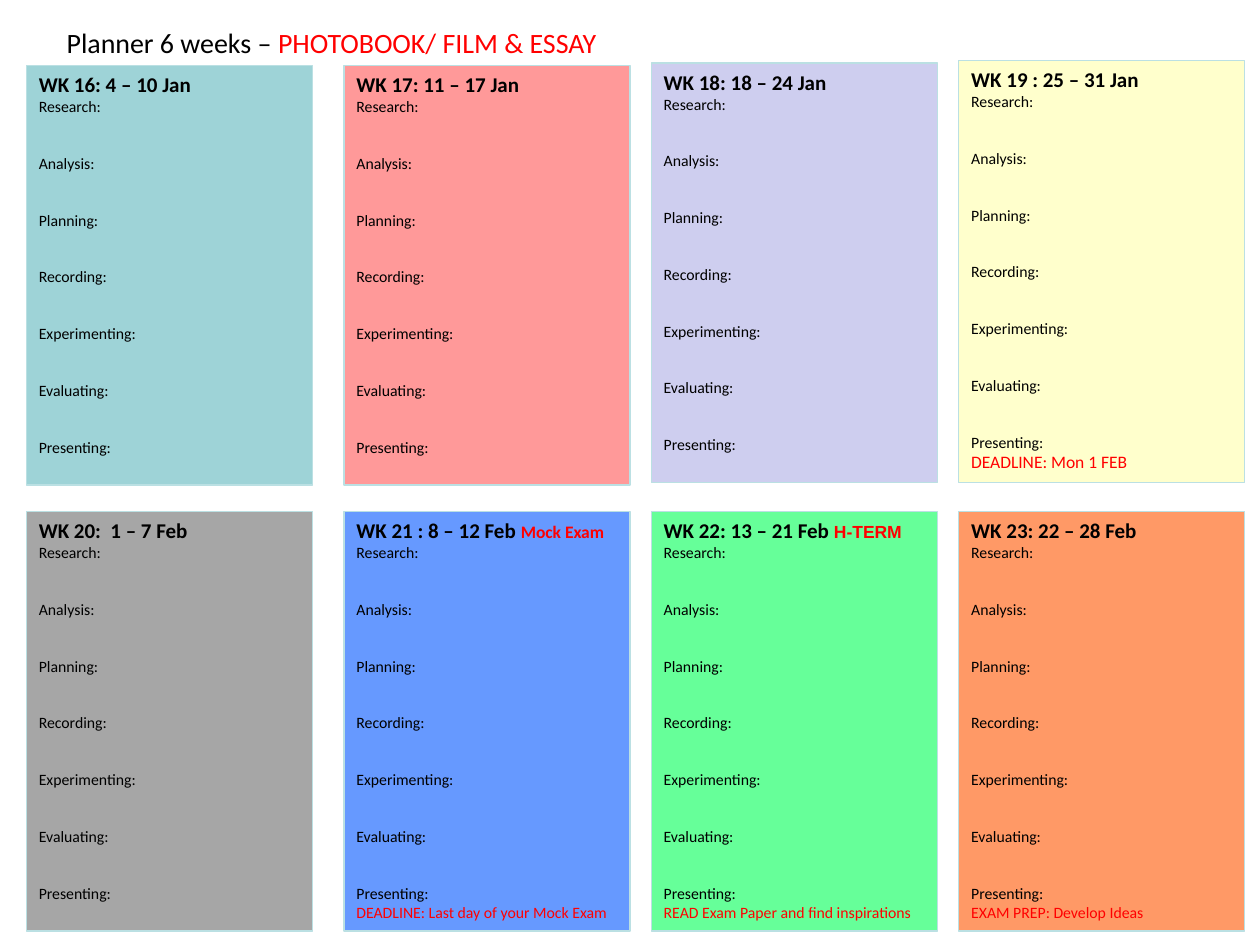
from dataclasses import dataclass

from pptx import Presentation
from pptx.dml.color import RGBColor
from pptx.enum.shapes import MSO_SHAPE
from pptx.enum.text import MSO_ANCHOR, PP_ALIGN
from pptx.util import Pt

RECTANGLE = MSO_SHAPE.RECTANGLE
TOP = MSO_ANCHOR.TOP
LEFT = PP_ALIGN.LEFT


@dataclass(frozen=True)
class Theme:
    font: str = "Calibri"
    tag_font: str = "Arial"
    ink: str = "000000"
    alert: str = "FF0000"
    border: str = "BBE0E3"
    border_width: float = 0.75
    title_size: int = 16
    heading_size: int = 12
    note_size: int = 10
    body_size: int = 9
    stage_gap: float = 21.6


STAGES = ["Research:", "Analysis:", "Planning:", "Recording:",
          "Experimenting:", "Evaluating:", "Presenting:"]
COLUMN_LEFTS = [15.1, 196.6, 372.2, 547.9]
JANUARY_TOPS = [37.4, 37.4, 36, 34.6]
FEBRUARY_TOP = 292.3
CARD_WIDTH, CARD_HEIGHT, TALL_CARD_HEIGHT = 163.4, 239.8, 241.2


class Planner:
    """Draws the parts of a weekly planner slide in one theme."""

    def __init__(self, slide, theme):
        self.slide = slide
        self.theme = theme

    def style_run(self, run, size, color=None, bold=False, font=None):
        run.font.name = font or self.theme.font
        run.font.size = Pt(size)
        run.font.bold = bold
        run.font.color.rgb = RGBColor.from_string(color or self.theme.ink)

    def add_run(self, paragraph, text, size, **style):
        run = paragraph.add_run()
        run.text = text
        self.style_run(run, size, **style)

    def title(self, left, top, width, height, subject, topic):
        box = self.slide.shapes.add_textbox(Pt(left), Pt(top), Pt(width), Pt(height))
        box.text_frame.word_wrap = True
        line = box.text_frame.paragraphs[0]
        self.add_run(line, subject, self.theme.title_size)
        self.add_run(line, topic, self.theme.title_size, color=self.theme.alert)

    def week_card(self, left, top, height, fill, week, tag="", tag_font=None,
                  note="", note_size=None):
        theme = self.theme
        card = self.slide.shapes.add_shape(
            RECTANGLE, Pt(left), Pt(top), Pt(CARD_WIDTH), Pt(height))
        card.shadow.inherit = False
        card.fill.solid()
        card.fill.fore_color.rgb = RGBColor.from_string(fill)
        card.line.color.rgb = RGBColor.from_string(theme.border)
        card.line.width = Pt(theme.border_width)

        frame = card.text_frame
        frame.word_wrap = True
        frame.vertical_anchor = TOP
        heading = frame.paragraphs[0]
        self.add_run(heading, week, theme.heading_size, bold=True)
        if tag:
            self.add_run(heading, tag, theme.note_size, color=theme.alert,
                         bold=True, font=tag_font)
        for index, stage in enumerate(STAGES):
            line = frame.add_paragraph()
            line.space_before = Pt(theme.stage_gap if index else 0)
            self.add_run(line, stage, theme.body_size)
        if note:
            self.add_run(frame.add_paragraph(), note, note_size or theme.body_size,
                         color=theme.alert)
        for paragraph in frame.paragraphs:
            paragraph.alignment = LEFT


def main():
    deck = Presentation()
    deck.slide_width, deck.slide_height = Pt(720), Pt(540)
    theme = Theme()
    planner = Planner(deck.slides.add_slide(deck.slide_layouts[6]), theme)

    january = [
        dict(week="WK 16: 4 – 10 Jan", fill="9ED3D7"),
        dict(week="WK 17: 11 – 17 Jan", fill="FF9999"),
        dict(week="WK 18: 18 – 24 Jan", fill="CECEEF"),
        dict(week="WK 19 : 25 – 31 Jan", fill="FFFFCC", height=TALL_CARD_HEIGHT,
             note="DEADLINE: Mon 1 FEB", note_size=theme.note_size),
    ]
    february = [
        dict(week="WK 20:  1 – 7 Feb", fill="A6A6A6"),
        dict(week="WK 21 : 8 – 12 Feb ", fill="6699FF", tag="Mock Exam",
             note="DEADLINE: Last day of your Mock Exam"),
        dict(week="WK 22: 13 – 21 Feb ", fill="66FF99", tag="H-TERM",
             tag_font=theme.tag_font, note="READ Exam Paper and find inspirations"),
        dict(week="WK 23: 22 – 28 Feb", fill="FF9966",
             note="EXAM PREP: Develop Ideas"),
    ]

    planner.title(31, 10.8, 652.3, 26.6, "Planner 6 weeks – ", "PHOTOBOOK/ FILM & ESSAY")
    february_tops = [FEBRUARY_TOP] * len(COLUMN_LEFTS)
    for weeks, tops in ((january, JANUARY_TOPS), (february, february_tops)):
        for left, top, details in zip(COLUMN_LEFTS, tops, weeks):
            planner.week_card(**{"left": left, "top": top, "height": CARD_HEIGHT, **details})

    deck.save("out.pptx")


if __name__ == "__main__":
    main()
